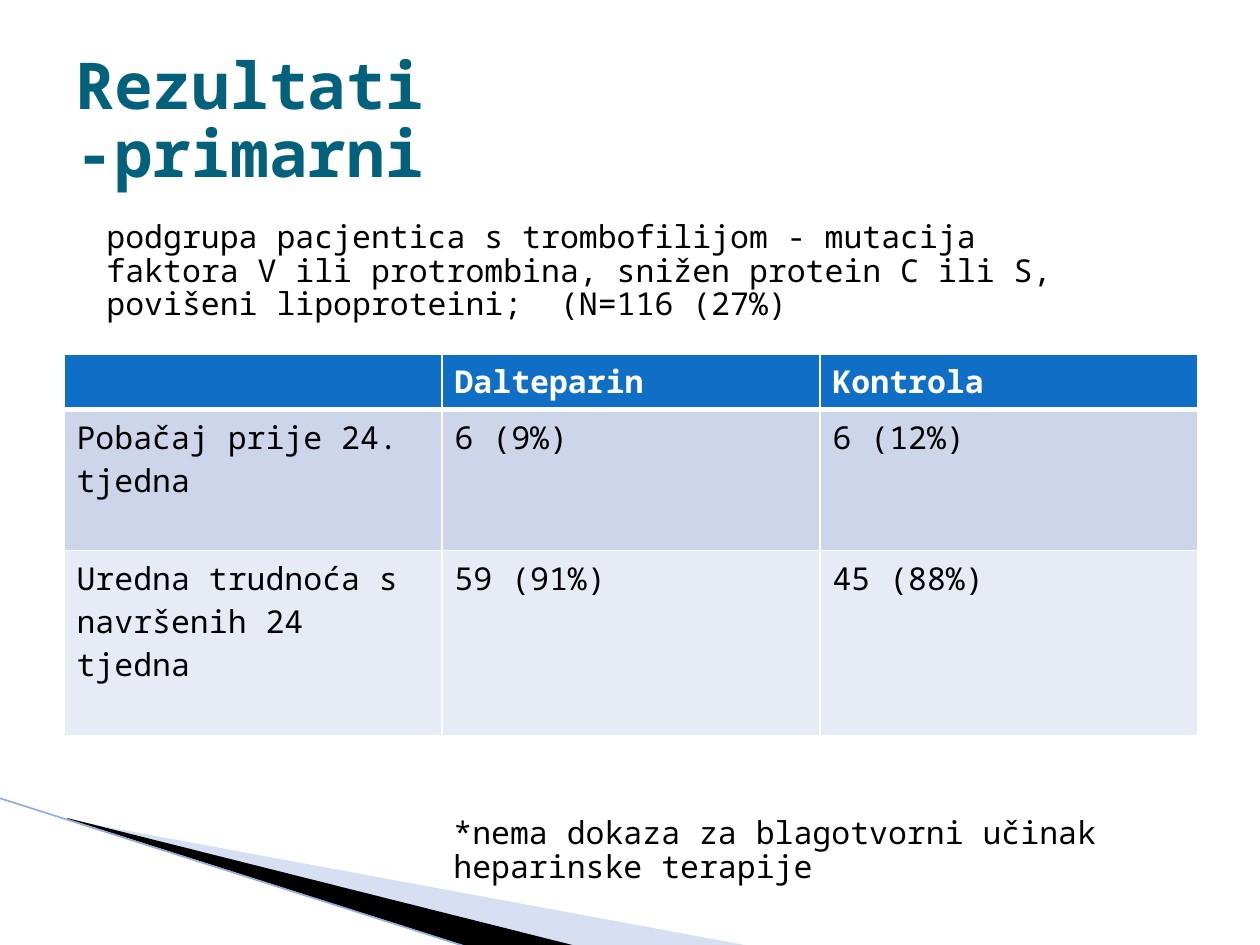
from dataclasses import dataclass

from lxml import etree
from pptx import Presentation
from pptx.dml.color import RGBColor
from pptx.enum.shapes import MSO_CONNECTOR
from pptx.enum.text import MSO_ANCHOR
from pptx.oxml.ns import qn
from pptx.util import Emu, Pt

SCALE = 914400 / 126
FONT = "Noto Sans Mono"
STRAIGHT = MSO_CONNECTOR.STRAIGHT
TOP, MIDDLE = MSO_ANCHOR.TOP, MSO_ANCHOR.MIDDLE
BLACK, WHITE, TEAL, PALE_BLUE = "000000", "FFFFFF", "04617B", "9DB2E1"
ROW_FILLS = ["0F6FC6", "CCD5EA", "E7EBF5"]
ROW_HEIGHTS = [55, 141, 185]
COLUMN_WIDTH = 378
TABLE_LEFT, TABLE_TOP = 64, 354
RESULTS = [
    ["", "Dalteparin", "Kontrola"],
    ["Pobačaj prije 24. tjedna", "6 (9%)", "6 (12%)"],
    ["Uredna trudnoća s navršenih 24 tjedna", "59 (91%)", "45 (88%)"],
]


@dataclass
class TextBlock:
    """A text box with its place and type style."""
    lines: list[str]
    left: int
    top: int
    width: int
    height: int
    size: float = 18
    color: str = BLACK
    bold: bool = False
    anchor: MSO_ANCHOR = TOP


@dataclass
class Wedge:
    """A filled polygon in the corner decoration."""
    points: list[tuple[int, int]]
    color: str
    opacity: int = 100


TEXT_BLOCKS = [
    TextBlock(["Rezultati", "-primarni"], 63, 44, 1134, 158, 36.9, TEAL, True, MIDDLE),
    TextBlock(["podgrupa pacjentica s trombofilijom - mutacija faktora V ili protrombina, "
               "snižen protein C ili S, povišeni lipoproteini;  (N=116 (27%)"],
              94, 216, 1012, 126),
    TextBlock(["*nema dokaza za blagotvorni učinak heparinske terapije"],
              441, 812, 858, 90),
]
WEDGES = [
    Wedge([(69, 820), (750, 946), (575, 946), (69, 819)], PALE_BLUE, 40),
    Wedge([(67, 818), (576, 946), (469, 947), (68, 819)], BLACK),
]


def px(length: int) -> Emu:
    """Turn a length in px into EMU."""
    return Emu(round(length * SCALE))


def rgb(color: str) -> RGBColor:
    """Turn a hex string into a colour."""
    return RGBColor.from_string(color)


def add_run(paragraph, text: str, size: float, color: str, bold: bool) -> None:
    """Add one styled run to a paragraph."""
    run = paragraph.add_run()
    run.text = text
    run.font.name = FONT
    run.font.size = Pt(size)
    run.font.bold = bold
    run.font.color.rgb = rgb(color)


def add_text(slide, block: TextBlock) -> None:
    """Draw a wrapped text box with line breaks between its lines."""
    box = slide.shapes.add_textbox(px(block.left), px(block.top),
                                   px(block.width), px(block.height))
    frame = box.text_frame
    frame.word_wrap = True
    frame.vertical_anchor = block.anchor
    paragraph = frame.paragraphs[0]
    paragraph.line_spacing = 0.88
    for index, line in enumerate(block.lines):
        if index:
            paragraph.add_line_break()
        add_run(paragraph, line, block.size, block.color, block.bold)


def add_wedge(slide, wedge: Wedge) -> None:
    """Draw a closed polygon without outline."""
    builder = slide.shapes.build_freeform(*wedge.points[0], scale=SCALE)
    builder.add_line_segments(wedge.points[1:], close=True)
    shape = builder.convert_to_shape()
    shape.shadow.inherit = False
    shape.fill.solid()
    shape.fill.fore_color.rgb = rgb(wedge.color)
    shape.line.fill.background()
    if wedge.opacity < 100:
        color = shape.fill._xPr.find(f"{qn('a:solidFill')}/{qn('a:srgbClr')}")
        etree.SubElement(color, qn("a:alpha"), val=str(wedge.opacity * 1000))


def add_edge_line(slide) -> None:
    """Draw the thin slanted line along the corner decoration."""
    line = slide.shapes.add_connector(STRAIGHT, px(-1), px(798), px(467), px(947))
    line.line.color.rgb = rgb("94ABDC")
    line.line.width = Pt(0.95)
    etree.SubElement(line._element.spPr, qn("a:effectLst"))


def set_borders(cell, top: float, bottom: float) -> None:
    """Give a cell white borders, with widths in points."""
    properties = cell._tc.get_or_add_tcPr()
    for side, width in {"L": 1, "R": 1, "T": top, "B": bottom}.items():
        border = etree.SubElement(properties, qn(f"a:ln{side}"), w=str(Pt(width)))
        fill = etree.SubElement(border, qn("a:solidFill"))
        etree.SubElement(fill, qn("a:srgbClr"), val=WHITE)


def add_results_table(slide) -> None:
    """Draw the table of results."""
    columns = len(RESULTS[0])
    table = slide.shapes.add_table(
        len(RESULTS), columns, px(TABLE_LEFT), px(TABLE_TOP),
        px(COLUMN_WIDTH * columns), px(sum(ROW_HEIGHTS))).table
    for column in table.columns:
        column.width = px(COLUMN_WIDTH)
    for index, values in enumerate(RESULTS):
        table.rows[index].height = px(ROW_HEIGHTS[index])
        header = index == 0
        for column, value in enumerate(values):
            cell = table.cell(index, column)
            set_borders(cell, 3 if index == 1 else 1, 3 if header else 1)
            cell.fill.solid()
            cell.fill.fore_color.rgb = rgb(ROW_FILLS[index])
            if value:
                add_run(cell.text_frame.paragraphs[0], value, 18,
                        WHITE if header else BLACK, header)


def main() -> None:
    """Build the slide and save it."""
    presentation = Presentation()
    presentation.slide_width, presentation.slide_height = px(1260), px(945)
    slide = presentation.slides.add_slide(presentation.slide_layouts[6])
    for wedge in WEDGES:
        add_wedge(slide, wedge)
    add_edge_line(slide)
    add_results_table(slide)
    for block in TEXT_BLOCKS:
        add_text(slide, block)
    presentation.save("out.pptx")


if __name__ == "__main__":
    main()
